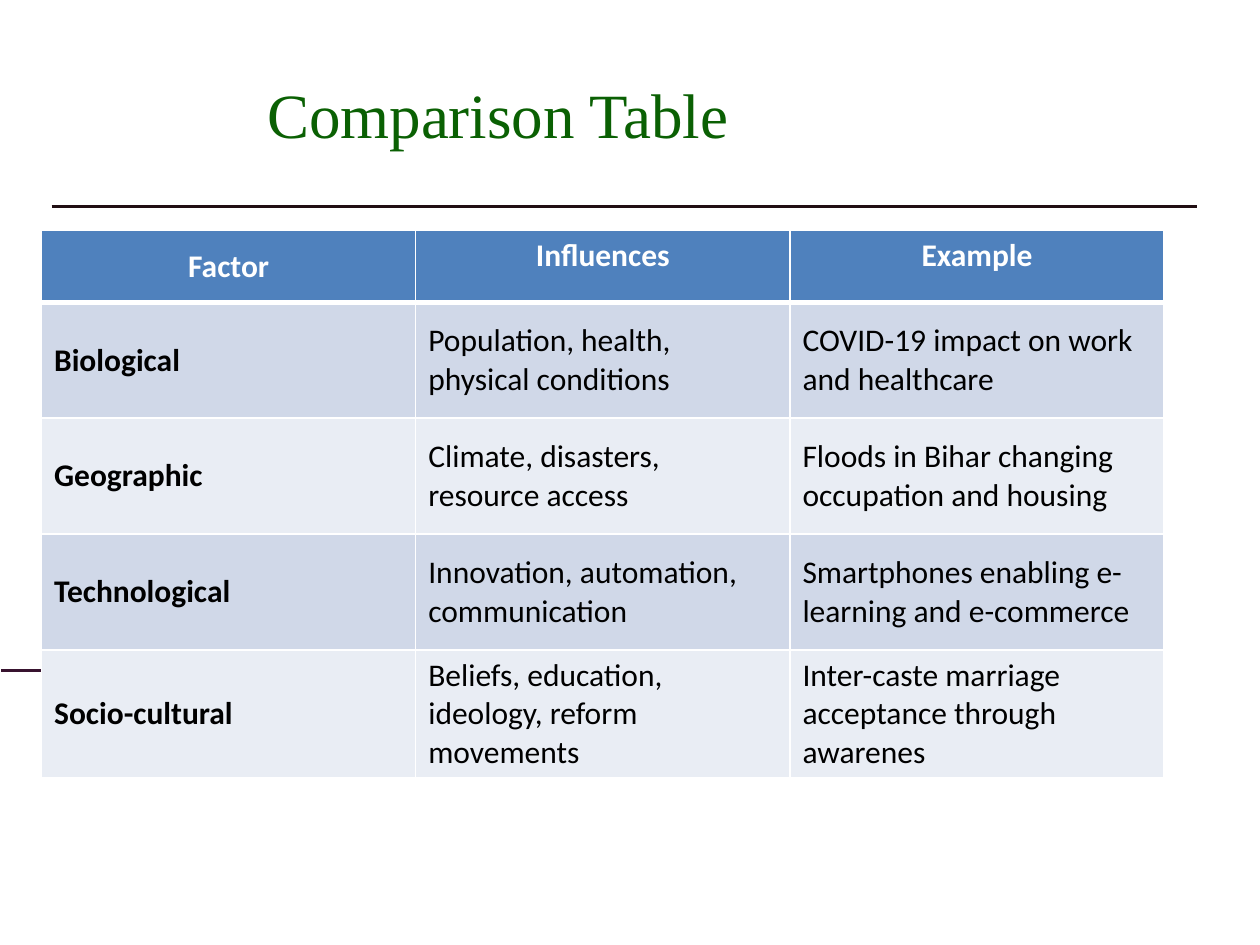
from lxml.etree import SubElement
from pptx import Presentation
from pptx.dml.color import RGBColor
from pptx.enum.shapes import MSO_CONNECTOR
from pptx.enum.text import MSO_ANCHOR, PP_ALIGN
from pptx.oxml.ns import qn
from pptx.util import Inches, Pt


def rgb(value):
    return RGBColor.from_string(value)


def add_border(cell, side, width):
    tc_pr = cell._tc.get_or_add_tcPr()
    ln = SubElement(tc_pr, qn(f"a:ln{side}"), w=str(Pt(width)))
    fill = SubElement(ln, qn("a:solidFill"))
    SubElement(fill, qn("a:srgbClr"), val="FFFFFF")


prs = Presentation()
prs.slide_width, prs.slide_height = Inches(10), Inches(7.5)
s = prs.slides.add_slide(prs.slide_layouts[5])

rules = [(0.01, 0.67, 5.32, "38132F", 1.64), (0.41, 9.5, 1.64, "210F13", 2.11)]
for left, right, y, color, width in rules:
    line = s.shapes.add_connector(
        MSO_CONNECTOR.STRAIGHT, Inches(left), Inches(y), Inches(right), Inches(y))
    line.line.color.rgb = rgb(color)
    line.line.width = Pt(width)
    SubElement(line._element.spPr, qn("a:effectLst"))

title = s.shapes.title
title.left, title.top = Inches(1.14), Inches(0.08)
title.width, title.height = Inches(8.17), Inches(1.14)
tf = title.text_frame
tf.text = "Comparison Table"
tf.margin_left = tf.margin_right = tf.margin_bottom = 0
tf.margin_top = Inches(0.52)
tf.vertical_anchor = MSO_ANCHOR.TOP
p = tf.paragraphs[0]
p.alignment = PP_ALIGN.LEFT
p._p.get_or_add_pPr().set("marL", str(Inches(0.98)))
font = p.runs[0].font
font.name, font.size = "Times New Roman", Pt(36)
font.color.rgb = rgb("0A6003")

rows = [
    ("Factor", "Influences", "Example"),
    ("Biological", "Population, health, physical conditions",
     "COVID-19 impact on work and healthcare"),
    ("Geographic", "Climate, disasters, resource access",
     "Floods in Bihar changing occupation and housing"),
    ("Technological", "Innovation, automation, communication",
     "Smartphones enabling e-learning and e-commerce"),
    ("Socio-cultural", "Beliefs, education, ideology, reform movements",
     "Inter-caste marriage acceptance through awarenes"),
]
table = s.shapes.add_table(
    len(rows), 3, Inches(0.33), Inches(1.83), Inches(8.92), Inches(4.27)).table
for column in table.columns:
    column.width = Inches(2.97)

for i, row in enumerate(rows):
    header = i == 0
    table.rows[i].height = Inches(0.57 if header else 0.92)
    for j, text in enumerate(row):
        cell = table.cell(i, j)
        for side in "LRTB":
            thick = (header and side == "B") or (i == 1 and side == "T")
            add_border(cell, side, 3 if thick else 1)
        cell.fill.solid()
        cell.fill.fore_color.rgb = rgb(
            "4F81BD" if header else "D0D8E8" if i % 2 else "E9EDF4")
        top = header and j > 0
        cell.vertical_anchor = MSO_ANCHOR.TOP if top else MSO_ANCHOR.MIDDLE
        cell.text = text
        p = cell.text_frame.paragraphs[0]
        p.alignment = PP_ALIGN.CENTER if header else PP_ALIGN.LEFT
        font = p.runs[0].font
        font.name, font.size = "Calibri", Pt(18)
        font.bold = header or j == 0
        font.color.rgb = rgb("FFFFFF" if header else "000000")

prs.save("out.pptx")
